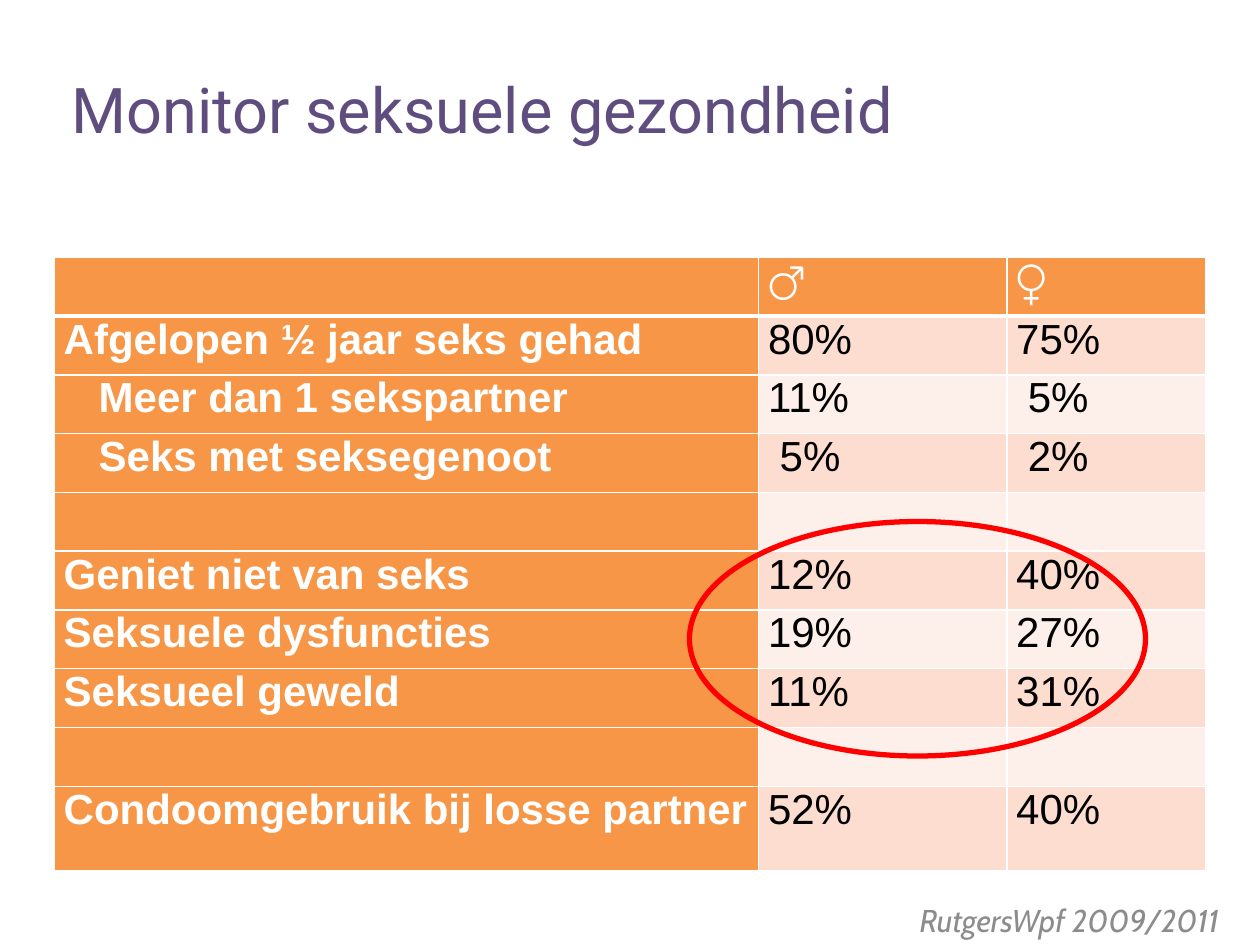
from lxml import etree
from pptx import Presentation
from pptx.dml.color import RGBColor
from pptx.enum.shapes import MSO_SHAPE
from pptx.enum.text import MSO_ANCHOR, MSO_AUTO_SIZE, PP_ALIGN
from pptx.oxml.ns import qn
from pptx.util import Pt

LEFT = PP_ALIGN.LEFT
MIDDLE = MSO_ANCHOR.MIDDLE
GROW = MSO_AUTO_SIZE.SHAPE_TO_FIT_TEXT
OVAL = MSO_SHAPE.OVAL

WHITE = "FFFFFF"
ORANGE = "F79646"
BANDS = ["FCDDCF", "FDEFE9"]

COLS = [402.5, 141.8, 113.8]
ROW, LAST = 33.6, 48
SPACE = 6.67  # width of one space in 24 pt Arial

# label, label indent, then value and indent for men and for women
DATA = [
    ("", 0, "♂", 0, "♀", 0),
    ("Afgelopen ½ jaar seks gehad", 0, "80%", 0, "75%", 0),
    ("Meer dan 1 sekspartner", 3, "11%", 0, "5%", 1),
    ("Seks met seksegenoot", 3, "5%", 1, "2%", 1),
    ("", 0, "", 0, "", 0),
    ("Geniet niet van seks", 0, "12%", 0, "40%", 0),
    ("Seksuele dysfuncties", 0, "19%", 0, "27%", 0),
    ("Seksueel geweld", 0, "11%", 0, "31%", 0),
    ("", 0, "", 0, "", 0),
    ("Condoomgebruik bij losse partner", 0, "52%", 0, "40%", 0),
]


def rgb(code):
    return RGBColor.from_string(code)


def place(shape, box):
    shape.left, shape.top, shape.width, shape.height = map(Pt, box)


def add_run(para, text, size, face, color, bold=False, italic=False):
    run = para.add_run()
    run.text = text
    font = run.font
    font.size, font.name = Pt(size), face
    font.bold, font.italic = bold, italic
    font.color.rgb = rgb(color)


def add_title(slide, box):
    title = slide.shapes.title
    place(title, box)
    frame = title.text_frame
    frame.vertical_anchor = MIDDLE
    para = frame.paragraphs[0]
    para.alignment = LEFT
    add_run(para, "Monitor seksuele gezondheid", 36, "Roboto", "5F4D7F")


def set_edges(cell, low):
    """White lines round a cell; low is the width of the bottom one."""
    props = cell._tc.get_or_add_tcPr()
    edges = [("lnL", 1), ("lnR", 1), ("lnT", 1), ("lnB", low)]
    for i, (tag, width) in enumerate(edges):
        line = etree.Element(qn("a:" + tag), w=str(Pt(width)))
        fill = etree.SubElement(line, qn("a:solidFill"))
        etree.SubElement(fill, qn("a:srgbClr"), val=WHITE)
        props.insert(i, line)


def fill_cell(cell, text, indent, head, label, band):
    strong = head or label
    cell.fill.solid()
    cell.fill.fore_color.rgb = rgb(ORANGE if strong else band)
    set_edges(cell, 3 if head else 1)
    cell.margin_left = cell.margin_right = Pt(5.4)
    cell.margin_top = cell.margin_bottom = Pt(0)
    para = cell.text_frame.paragraphs[0]
    if indent:
        para._p.get_or_add_pPr().set("marL", str(Pt(indent * SPACE)))
    if text:
        add_run(para, text, 24, "Cabin" if head else "Arial",
                WHITE if strong else "000000", bold=strong)


def add_grid(slide, box):
    frame = slide.shapes.add_table(len(DATA), len(COLS), *map(Pt, box))
    table = frame.table
    table.first_col = True
    table.horz_banding = False
    for col, width in zip(table.columns, COLS):
        col.width = Pt(width)
    for r, data in enumerate(DATA):
        table.rows[r].height = Pt(LAST if r == len(DATA) - 1 else ROW)
        for c in range(len(COLS)):
            text, indent = data[2 * c:2 * c + 2]
            fill_cell(table.cell(r, c), text, indent,
                      r == 0, c == 0, BANDS[(r - 1) % 2])


def add_ring(slide, box):
    ring = slide.shapes.add_shape(OVAL, *map(Pt, box))
    ring.shadow.inherit = False
    ring.fill.background()
    ring.line.color.rgb = rgb("FF0000")
    ring.line.width = Pt(3)


def add_source(slide, box):
    frame = slide.shapes.add_textbox(*map(Pt, box)).text_frame
    frame.word_wrap = False
    frame.auto_size = GROW
    para = frame.paragraphs[0]
    para.alignment = LEFT
    add_run(para, "RutgersWpf 2009/2011", 18, "Cabin", "8C8C8C", italic=True)


def main():
    deck = Presentation()
    deck.slide_width, deck.slide_height = Pt(720), Pt(540)
    slide = deck.slides.add_slide(deck.slide_layouts[5])
    add_title(slide, (33.8, 28, 506, 67.7))
    add_grid(slide, (31, 147, sum(COLS), ROW * (len(DATA) - 1) + LAST))
    add_ring(slide, (394, 298, 260.6, 134))
    add_source(slide, (518.4, 511.2, 200, 28.8))
    deck.save("out.pptx")


if __name__ == "__main__":
    main()
